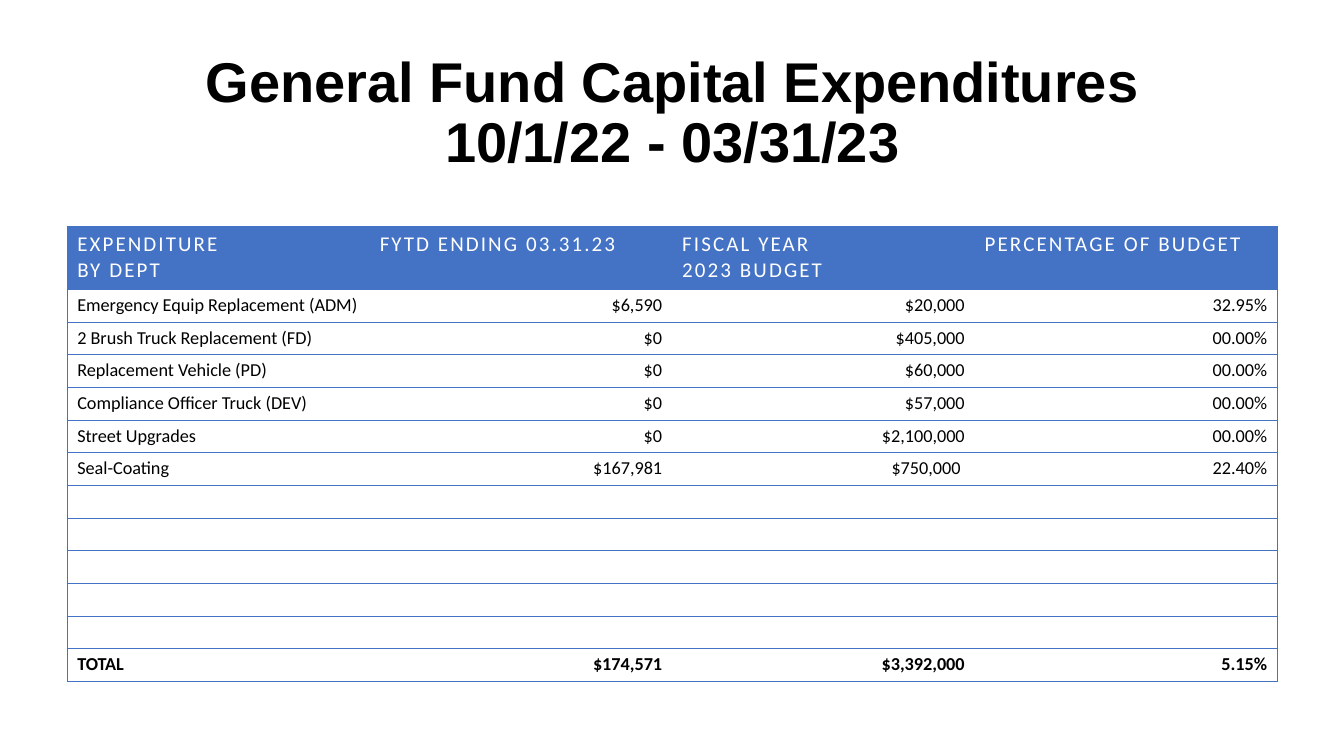
from pptx import Presentation
from pptx import util as u
from pptx.dml.color import RGBColor
from pptx.enum import text
from pptx.oxml.xmlchemy import OxmlElement

BLUE = RGBColor(0x44, 0x72, 0xC4)
WHITE = RGBColor(0xFF, 0xFF, 0xFF)
BLACK = RGBColor(0, 0, 0)

SLIDE_W, SLIDE_H = u.Inches(13.33), u.Inches(7.5)
MARGIN = int(SLIDE_W * 0.05)
CONTENT_W = u.Inches(12)
TABLE_TOP = int(SLIDE_H * 0.3)
TABLE_H = u.Inches(4.51)
HEADER_H = u.Inches(0.62)
BODY_SIZE = 13
EMPTY_ROWS = 5

HEADER = ["EXPENDITURE\nBY DEPT", "FYTD ENDING 03.31.23",
          "FISCAL YEAR\n2023 BUDGET", "PERCENTAGE OF BUDGET"]
EXPENDITURES = [
    ["Emergency Equip Replacement (ADM)", "$6,590", "$20,000", "32.95%"],
    ["2 Brush Truck Replacement (FD)", "$0", "$405,000", "00.00%"],
    ["Replacement Vehicle (PD)", "$0", "$60,000", "00.00%"],
    ["Compliance Officer Truck (DEV)", "$0", "$57,000", "00.00%"],
    ["Street Upgrades", "$0", "$2,100,000", "00.00%"],
    ["Seal-Coating", "$167,981", "$750,000 ", "22.40%"],
]
TOTAL = ["TOTAL", "$174,571", "$3,392,000", "5.15%"]


def style_font(para, name, size, color, bold=False):
    para.font.name = name
    para.font.size = u.Pt(size)
    para.font.color.rgb = color
    para.font.bold = bold


def add_title(page, wording):
    box = page.shapes.add_textbox(MARGIN, int(SLIDE_H * 0.045),
                                  CONTENT_W, int(SLIDE_H * 0.212))
    frame = box.text_frame
    frame.word_wrap = True
    frame.vertical_anchor = text.MSO_ANCHOR.MIDDLE
    para = frame.paragraphs[0]
    para.text = wording
    para.alignment = text.PP_ALIGN.CENTER
    para.line_spacing = 0.9
    style_font(para, "Arial", 40, BLACK, bold=True)


def set_borders(cell, blue_sides):
    """Draw the given sides in blue and hide the others."""
    props = cell._tc.get_or_add_tcPr()
    for side in "LRTB":
        line = OxmlElement(f"a:ln{side}")
        line.set("w", str(u.Pt(0.5)))
        if side in blue_sides:
            fill = OxmlElement("a:solidFill")
            color = OxmlElement("a:srgbClr")
            color.set("val", str(BLUE))
            fill.append(color)
        else:
            fill = OxmlElement("a:noFill")
        line.append(fill)
        props.append(line)


def fill_header_cell(cell, wording):
    cell.text = wording
    cell.fill.solid()
    cell.fill.fore_color.rgb = BLUE
    for para in cell.text_frame.paragraphs:
        style_font(para, "Calibri", 15, WHITE)
        for span in para.runs:
            span.font._element.set("spc", "150")


def fill_body_cell(cell, wording, is_label, bold):
    cell.fill.background()
    para = cell.text_frame.paragraphs[0]
    if not wording:
        # The end mark sets the height of an empty line.
        end_mark = OxmlElement("a:endParaRPr")
        end_mark.set("sz", str(BODY_SIZE * 100))
        para._p.append(end_mark)
        return
    para.text = wording
    para.alignment = text.PP_ALIGN.LEFT if is_label else text.PP_ALIGN.RIGHT
    style_font(para, "Calibri", BODY_SIZE, BLACK, bold)
    if is_label:
        cell.margin_right = 0


def add_expenditure_table(page):
    blank = [""] * len(HEADER)
    rows = [HEADER, *EXPENDITURES, *[blank] * EMPTY_ROWS, TOTAL]
    last_column = len(HEADER) - 1
    table = page.shapes.add_table(len(rows), len(HEADER), MARGIN, TABLE_TOP,
                                  CONTENT_W, TABLE_H).table
    table.first_row = False
    table.horz_banding = False
    for column in table.columns:
        column.width = CONTENT_W // len(HEADER)
    for r, values in enumerate(rows):
        table.rows[r].height = (HEADER_H if r == 0 else
                                (TABLE_H - HEADER_H) // (len(rows) - 1))
        for c, wording in enumerate(values):
            cell = table.cell(r, c)
            outer = {0: "L", last_column: "R"}.get(c, "")
            set_borders(cell, "TB" + outer)
            if r == 0:
                fill_header_cell(cell, wording)
            else:
                fill_body_cell(cell, wording, c == 0, values is TOTAL)


def main():
    deck = Presentation()
    deck.slide_width, deck.slide_height = SLIDE_W, SLIDE_H
    page = deck.slides.add_slide(deck.slide_layouts[6])
    add_title(page, "General Fund Capital Expenditures\v10/1/22 - 03/31/23")
    add_expenditure_table(page)
    deck.save("out.pptx")


if __name__ == "__main__":
    main()
